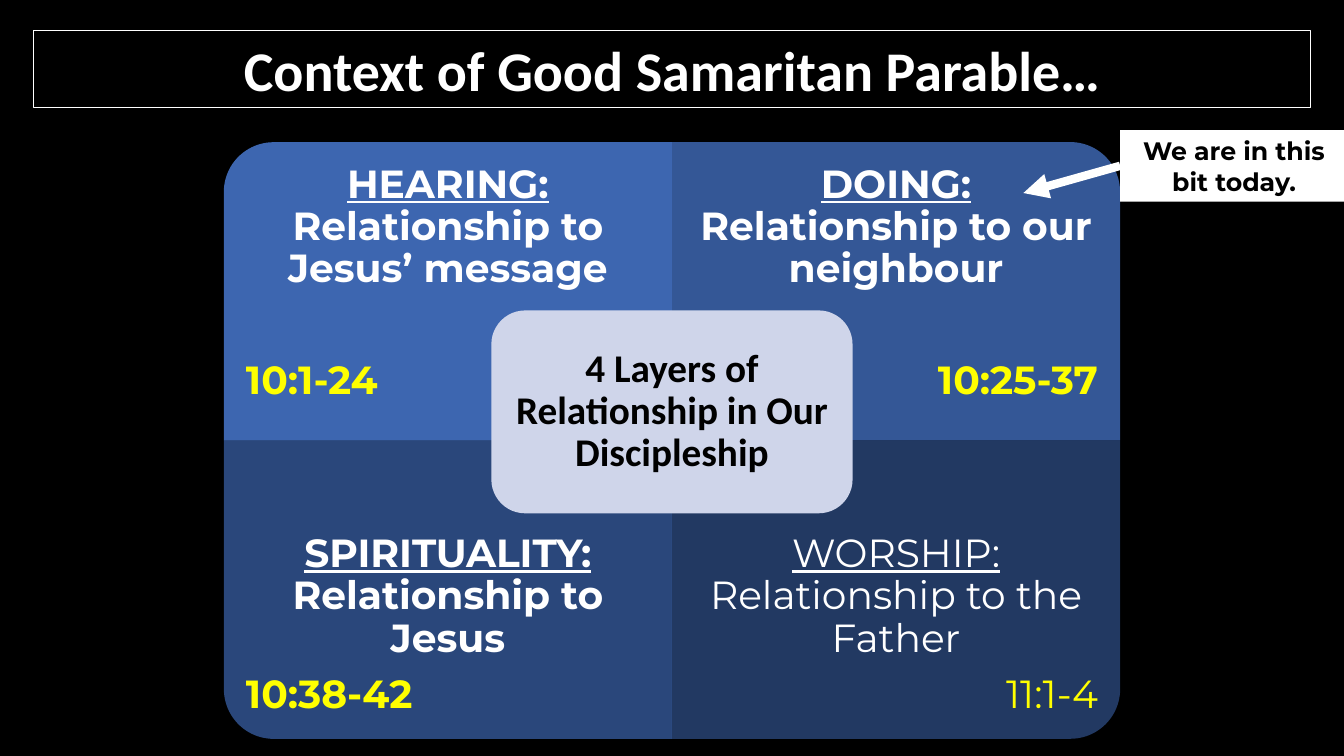
from lxml.etree import SubElement
from pptx import Presentation
from pptx.dml.color import RGBColor
from pptx.enum.shapes import MSO_CONNECTOR as Connector, MSO_SHAPE as Shape
from pptx.enum.text import MSO_ANCHOR as Anchor, PP_ALIGN as Align
from pptx.oxml.ns import qn
from pptx.util import Inches, Pt

COLORS = {
    "background": "000000",
    "quadrant": "4472C4",
    "center": "CFD5EA",
    "light": "FFFFFF",
    "dark": "000000",
    "verse": "FFFF00",
}
WIDTH, HEIGHT = 13.33, 7.5
MATRIX = (2.22, 1.41, 8.89, 5.92)
QUADRANTS = [
    ("HEARING:", "Relationship to Jesus’ message", "10:1-24", True, 270, 90),
    ("DOING:", "Relationship to our neighbour", "10:25-37", True, 0, 77),
    ("SPIRITUALITY:", "Relationship to Jesus", "10:38-42", True, 180, 63),
    ("WORSHIP:", "Relationship to the Father", "11:1-4", False, 90, 50),
]


def rgb(name):
    return RGBColor.from_string(COLORS[name])


def add_block(slide, kind, box, fill=None, line=None, alpha=100):
    block = slide.shapes.add_shape(kind, *map(Inches, box))
    block.shadow.inherit = False
    if fill:
        block.fill.solid()
        block.fill.fore_color.rgb = rgb(fill)
        if alpha < 100:
            color = block._element.spPr.find(qn("a:solidFill"))[0]
            SubElement(color, qn("a:alpha")).set("val", str(alpha * 1000))
    else:
        block.fill.background()
    if line:
        block.line.color.rgb = rgb(line)
        block.line.width = Pt(0.75)
    else:
        block.line.fill.background()
    return block


def set_frame(frame, anchor, side, top):
    frame.word_wrap = True
    frame.vertical_anchor = anchor
    frame.margin_left = frame.margin_right = Inches(side)
    frame.margin_top = frame.margin_bottom = Inches(top)


def style(run, font, size, color, bold=True, underline=False):
    run.font.name = font
    run.font.size = Pt(size)
    run.font.color.rgb = rgb(color)
    run.font.bold = bold
    run.font.underline = underline


def write_label(block, text, font, size, color, side=0.1, top=0.05, spacing=1.0):
    set_frame(block.text_frame, Anchor.MIDDLE, side, top)
    paragraph = block.text_frame.paragraphs[0]
    paragraph.text = text
    paragraph.alignment = Align.CENTER
    paragraph.line_spacing = spacing
    style(paragraph.runs[0], font, size, color)


def add_quadrant(slide, box, content, row, column):
    heading, meaning, verses, bold, rotation, alpha = content
    left, top, width, height = box
    panel = box
    if rotation % 180:
        panel = (left + (width - height) / 2, top + (height - width) / 2, height, width)
    add_block(slide, Shape.ROUND_1_RECTANGLE, panel,
              "quadrant", alpha=alpha).rotation = rotation

    frame = slide.shapes.add_textbox(*map(Inches, box)).text_frame
    set_frame(frame, Anchor.BOTTOM if row else Anchor.TOP, 0.22, 0.22)
    topic, passage = frame.paragraphs[0], frame.add_paragraph()
    topic.text = heading
    topic.add_run().text = " " + meaning
    topic.alignment = Align.CENTER
    topic.space_after = Pt(9.8 if row else 49.6)
    passage.text = verses
    passage.alignment = Align.RIGHT if column else Align.LEFT
    topic.line_spacing = passage.line_spacing = 0.9
    style(topic.runs[0], "Montserrat", 28, "light", bold, True)
    style(topic.runs[1], "Montserrat", 28, "light", bold)
    style(passage.runs[0], "Montserrat", 28, "verse", bold)


def add_matrix(slide, box):
    left, top, width, height = box
    cell_width, cell_height = width / 2, height / 2
    for index, content in enumerate(QUADRANTS):
        row, column = divmod(index, 2)
        cell = (left + column * cell_width, top + row * cell_height, cell_width, cell_height)
        add_quadrant(slide, cell, content, row, column)

    center_width, center_height = 0.403 * width, 0.34 * height
    center = add_block(slide, Shape.ROUNDED_RECTANGLE,
                       (left + (width - center_width) / 2, top + 0.282 * height,
                        center_width, center_height), "center")
    write_label(center, "4 Layers of Relationship in Our Discipleship",
                "Calibri", 28, "dark", 0.12, 0.12, 0.9)


def add_callout(slide, box):
    left, top, width, height = box
    note = add_block(slide, Shape.RECTANGLE, box, "light")
    write_label(note, "We are in this bit today.", "Montserrat", 18, "dark")
    start_y = top + height / 2
    arrow = slide.shapes.add_connector(
        Connector.STRAIGHT, *map(Inches, (left, start_y, left - 0.96, start_y + 0.27)))
    arrow.line.color.rgb = rgb("light")
    arrow.line.width = Pt(6)
    outline = arrow._element.spPr.find(qn("a:ln"))
    SubElement(outline, qn("a:tailEnd")).set("type", "triangle")
    SubElement(arrow._element.spPr, qn("a:effectLst"))


def add_title(slide, box):
    title = add_block(slide, Shape.RECTANGLE, box, line="light")
    write_label(title, "Context of Good Samaritan Parable…", "Calibri", 40, "light")


def main():
    deck = Presentation()
    deck.slide_width, deck.slide_height = Inches(WIDTH), Inches(HEIGHT)
    slide = deck.slides.add_slide(deck.slide_layouts[6])
    slide.background.fill.solid()
    slide.background.fill.fore_color.rgb = rgb("background")
    add_matrix(slide, MATRIX)
    add_callout(slide, (MATRIX[0] + MATRIX[2], 1.29, 2.26, 0.71))
    add_title(slide, (0.025 * WIDTH, 0.04 * HEIGHT, 0.95 * WIDTH, 0.77))
    deck.save("out.pptx")


if __name__ == "__main__":
    main()
